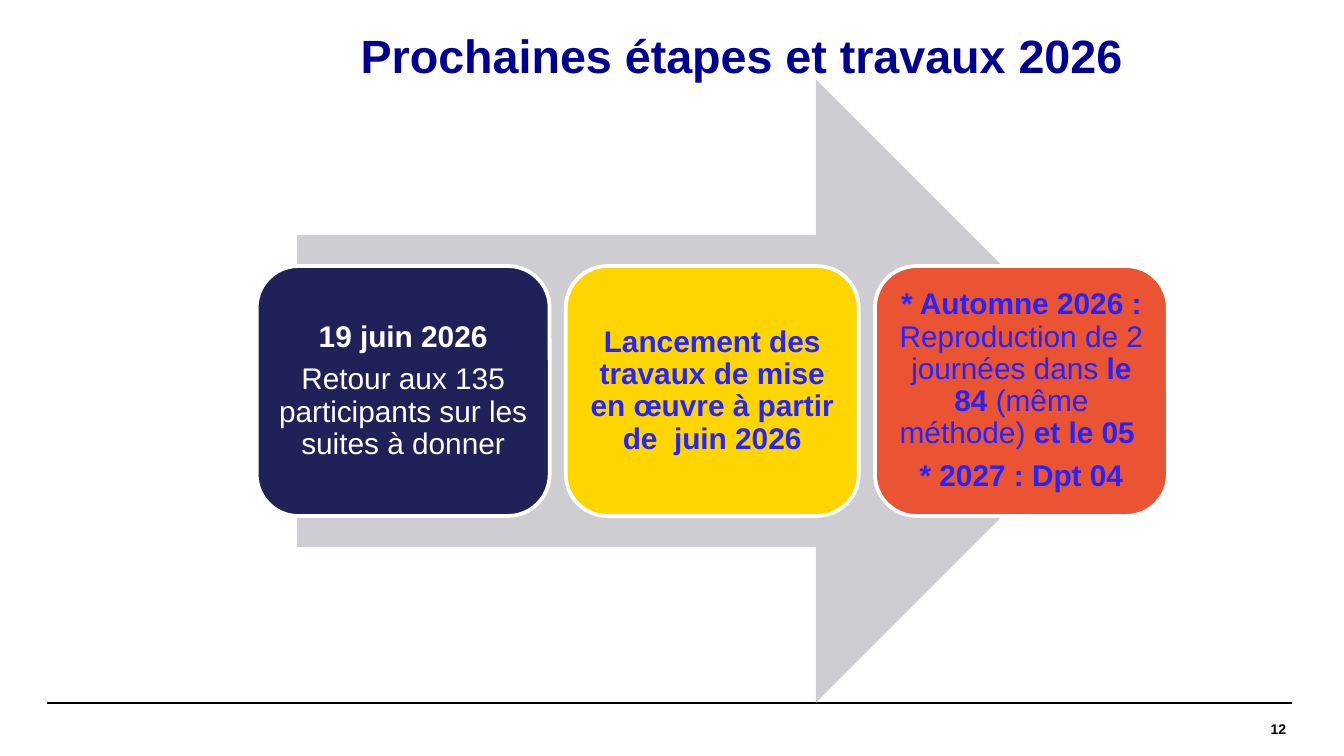
from dataclasses import dataclass

from lxml import etree
from pptx import Presentation
from pptx.dml.color import RGBColor
from pptx.enum.shapes import MSO_CONNECTOR, MSO_SHAPE
from pptx.enum.text import MSO_ANCHOR, PP_ALIGN
from pptx.oxml.ns import qn
from pptx.util import Inches, Pt

STRAIGHT = MSO_CONNECTOR.STRAIGHT
RIGHT_ARROW = MSO_SHAPE.RIGHT_ARROW
ROUNDED = MSO_SHAPE.ROUNDED_RECTANGLE
MIDDLE = MSO_ANCHOR.MIDDLE
CENTER, RIGHT = PP_ALIGN.CENTER, PP_ALIGN.RIGHT


@dataclass(frozen=True)
class Theme:
    font: str = "Arial"
    title: str = "000091"
    black: str = "000000"
    white: str = "FFFFFF"
    arrow: str = "CDCDD2"
    navy: str = "21215A"
    yellow: str = "FFD500"
    orange: str = "EA5433"
    blue: str = "2424FF"
    title_size: float = 25
    step_size: float = 16
    number_size: float = 7.5


THEME = Theme()

# Each step: fill, text colour, paragraphs of (text, bold) runs
STEPS = [
    (THEME.navy, THEME.white, [
        [("19 juin 2026", True)],
        [("Retour aux 135 participants sur les suites à donner", False)],
    ]),
    (THEME.yellow, THEME.blue, [
        [("Lancement des travaux de mise en œuvre à partir de  juin 2026", True)],
    ]),
    (THEME.orange, THEME.blue, [
        [("* Automne 2026 : ", True), ("Reproduction de 2 journées dans ", False),
         ("le 84 ", True), ("(même méthode) ", False), ("et le 05 ", True)],
        [("* 2027 : Dpt 04", True)],
    ]),
]


def set_margins(frame, x, y):
    frame.margin_left = frame.margin_right = Inches(x)
    frame.margin_top = frame.margin_bottom = Inches(y)


def write_text(frame, paragraphs, size, color, align, line_spacing=1.0, gap=0):
    frame.word_wrap = True
    frame.vertical_anchor = MIDDLE
    for index, spans in enumerate(paragraphs):
        para = frame.paragraphs[0] if index == 0 else frame.add_paragraph()
        para.alignment = align
        para.line_spacing = line_spacing
        para.space_after = Pt(gap)
        for text, bold in spans:
            span = para.add_run()
            span.text = text
            span.font.name = THEME.font
            span.font.size = Pt(size)
            span.font.bold = bold
            span.font.color.rgb = RGBColor.from_string(color)


def add_label(page, left, top, width, height, margins):
    box = page.shapes.add_textbox(Inches(left), Inches(top), Inches(width), Inches(height))
    set_margins(box.text_frame, *margins)
    return box.text_frame


def add_filled_shape(page, kind, left, top, width, height, fill):
    shape = page.shapes.add_shape(kind, Inches(left), Inches(top), Inches(width), Inches(height))
    shape.shadow.inherit = False
    shape.fill.solid()
    shape.fill.fore_color.rgb = RGBColor.from_string(fill)
    shape.line.fill.background()
    return shape


def add_step(page, left, fill, color, paragraphs):
    card = add_filled_shape(page, ROUNDED, left, 1.98, 2.18, 1.86, fill)
    card.line.color.rgb = RGBColor.from_string(THEME.white)
    card.line.width = Pt(2)
    set_margins(card.text_frame, 0.07, 0.07)
    write_text(card.text_frame, paragraphs, THEME.step_size, color, CENTER,
               line_spacing=0.9, gap=0.35 * THEME.step_size)


def add_rule(page, start, end, y):
    rule = page.shapes.add_connector(STRAIGHT, Inches(start), Inches(y), Inches(end), Inches(y))
    rule.line.color.rgb = RGBColor.from_string(THEME.black)
    rule.line.width = Pt(0.8)
    etree.SubElement(rule._element.spPr, qn("a:effectLst"))


def main():
    deck = Presentation()
    deck.slide_width = Inches(10)
    deck.slide_height = deck.slide_width * 9 // 16
    page = deck.slides.add_slide(deck.slide_layouts[6])

    # Footer: two overlapping rules and the page number
    for start in (0.35, 0.39):
        add_rule(page, start, start + 9.22, 5.23)
    number = add_label(page, 8.09, 5.23, 1.48, 0.39, (0, 0))
    write_text(number, [[("12", True)]], THEME.number_size, THEME.black, RIGHT)

    # Title, nudged right by its left margin
    title = add_label(page, 2.08, 0.14, 6.85, 0.59, (0.1, 0.05))
    title.margin_left = Inches(0.12)
    write_text(title, [[("Prochaines étapes et travaux 2026", True)]],
               THEME.title_size, THEME.title, CENTER, line_spacing=0.9)

    # Arrow behind the steps
    add_filled_shape(page, RIGHT_ARROW, 2.21, 0.59, 6.18, 4.64, THEME.arrow)

    # Evenly spaced steps
    for index, (fill, color, paragraphs) in enumerate(STEPS):
        add_step(page, 1.91 + 2.3 * index, fill, color, paragraphs)

    deck.save("out.pptx")


if __name__ == "__main__":
    main()
